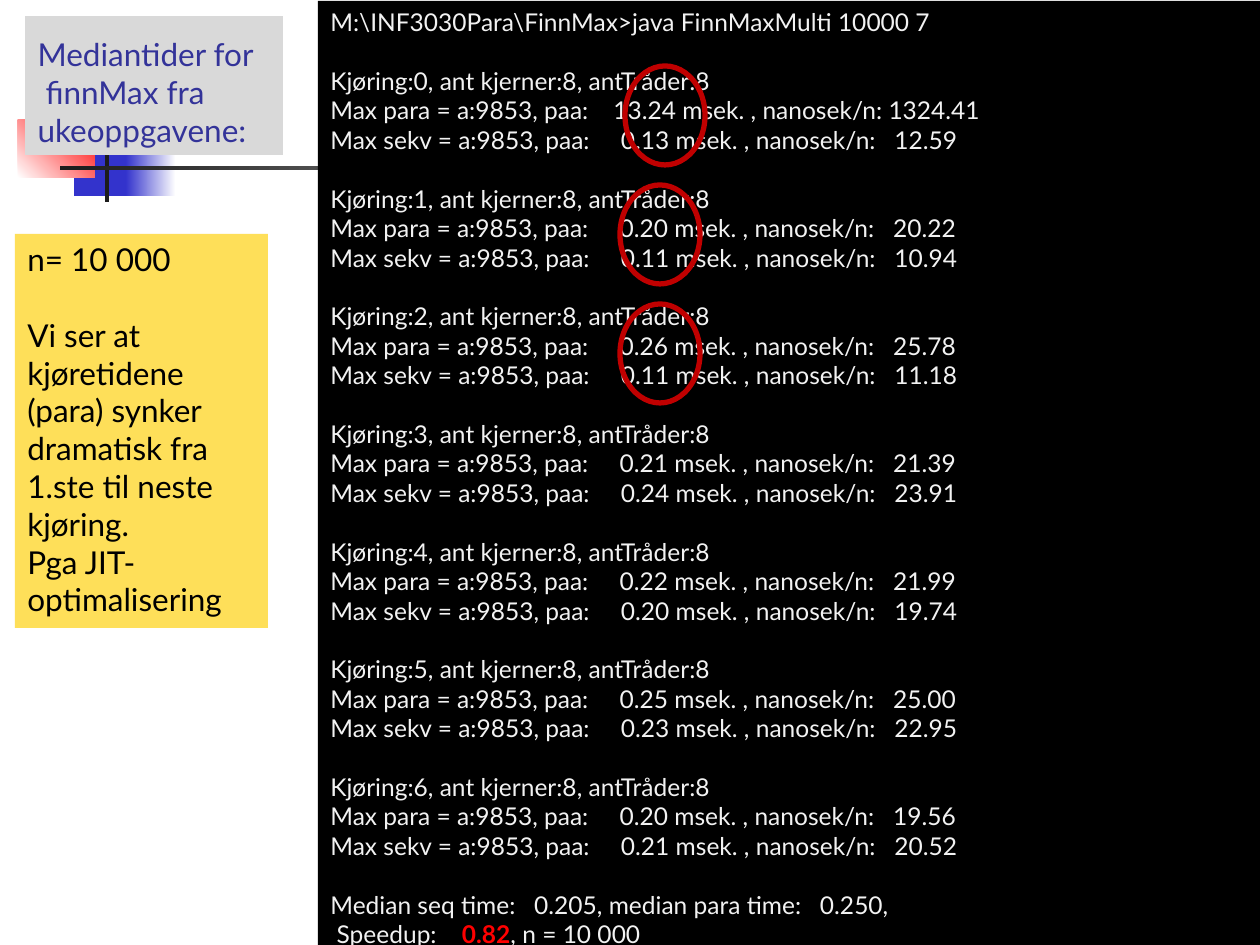
"""Build the slide on median times for finnMax."""
from dataclasses import dataclass

from pptx import Presentation
from pptx.dml.color import RGBColor
from pptx.enum.shapes import MSO_SHAPE
from pptx.enum.text import MSO_ANCHOR, PP_ALIGN
from pptx.util import Emu, Pt


@dataclass(frozen=True)
class Theme:
    font: str = "Lato"
    blue: str = "3333CC"
    title: str = "333399"
    dark: str = "1C1C1C"
    white: str = "FFFFFF"
    red: str = "FF0000"
    ring: str = "C00000"
    grey: str = "D9D9D9"
    yellow: str = "FEDF59"
    black: str = "000000"
    output: str = "F2F2F2"
    large: int = 18
    small: int = 14
    gap: float = 1.2


T = Theme()
SCALE = 914400 / 126


def box(*px):
    return [Emu(round(v * SCALE)) for v in px]


def write(tf, lines, size, color):
    tf.word_wrap = True
    for i, (text, gap) in enumerate(lines):
        p = tf.paragraphs[0] if i == 0 else tf.add_paragraph()
        p.text = text
        p.alignment = PP_ALIGN.LEFT
        p.space_before = Pt(round(size * T.gap, 1) if gap else 0)
        for r in p.runs:
            r.font.name = T.font
            r.font.size = Pt(size)
            r.font.color.rgb = RGBColor.from_string(color)


prs = Presentation()
prs.slide_width, prs.slide_height = box(1260, 945)
s = prs.slides.add_slide(prs.slide_layouts[5])

decorations = [
    ((74, 130, 58, 66), (T.blue,), 0),
    ((126, 130, 50, 66), (T.blue, T.white), 0),
    ((18, 120, 77, 58), (T.white, T.red), 45),
    ((105, 57, 4, 145), (T.dark,), 0),
    ((60, 166, 1134, 4), (T.dark, T.white), 0),
]
for px, colors, angle in decorations:
    sp = s.shapes.add_shape(MSO_SHAPE.RECTANGLE, *box(*px))
    sp.shadow.inherit = False
    sp.line.fill.background()
    if len(colors) == 1:
        sp.fill.solid()
        sp.fill.fore_color.rgb = RGBColor.from_string(colors[0])
    else:
        sp.fill.gradient()
        sp.fill.gradient_angle = angle
        for stop, color, position in zip(sp.fill.gradient_stops, colors, (0, 1)):
            stop.color.rgb = RGBColor.from_string(color)
            stop.position = position

title = s.shapes.title
s.shapes.element.append(title.element)
title.left, title.top, title.width, title.height = box(25, 16, 258, 139)
title.fill.solid()
title.fill.fore_color.rgb = RGBColor.from_string(T.grey)
title.text_frame.vertical_anchor = MSO_ANCHOR.BOTTOM
write(title.text_frame, [("Mediantider for\v finnMax fra\vukeoppgavene:", False)],
      T.large, T.title)

runs = [
    (13.24, 1324.41, 0.13, 12.59),
    (0.20, 20.22, 0.11, 10.94),
    (0.26, 25.78, 0.11, 11.18),
    (0.21, 21.39, 0.24, 23.91),
    (0.22, 21.99, 0.20, 19.74),
    (0.25, 25.00, 0.23, 22.95),
    (0.20, 19.56, 0.21, 20.52),
]
output = [(r"M:\INF3030Para\FinnMax>java FinnMaxMulti 10000 7", False)]
for i, (para, para_n, sekv, sekv_n) in enumerate(runs):
    output.append((f"Kjøring:{i}, ant kjerner:8, antTråder:8", True))
    for kind, ms, ns in (("para", para, para_n), ("sekv", sekv, sekv_n)):
        output.append((f"Max {kind} = a:9853, paa:{ms:9.2f} msek. , nanosek/n:{ns:8.2f}", False))
output.append(("Median seq time:   0.205, median para time:   0.250,", True))
output.append((" Speedup:    ", False))

notes = [
    ("n= 10 000", False),
    ("Vi ser at kjøretidene\v(para) synker dramatisk fra 1.ste til neste kjøring.", True),
    ("Pga JIT-optimalisering", False),
]
panels = [
    ((318, 1, 942, 963), T.black, output, T.small, T.output),
    ((15, 234, 253, 394), T.yellow, notes, T.large, T.black),
]
frames = []
for px, fill, lines, size, color in panels:
    sp = s.shapes.add_textbox(*box(*px))
    sp.fill.solid()
    sp.fill.fore_color.rgb = RGBColor.from_string(fill)
    write(sp.text_frame, lines, size, color)
    frames.append(sp.text_frame)

p = frames[0].paragraphs[-1]
for text, color, bold in (("0.82", T.red, True), (", n = 10 000", T.output, False)):
    r = p.add_run()
    r.text = text
    r.font.name = T.font
    r.font.size = Pt(T.small)
    r.font.bold = bold
    r.font.color.rgb = RGBColor.from_string(color)

for x, y in ((625, 66), (620, 185), (620, 304)):
    sp = s.shapes.add_shape(MSO_SHAPE.OVAL, *box(x, y, 80, 99))
    sp.shadow.inherit = False
    sp.fill.background()
    sp.line.color.rgb = RGBColor.from_string(T.ring)
    sp.line.width = Pt(3)

prs.save("out.pptx")
